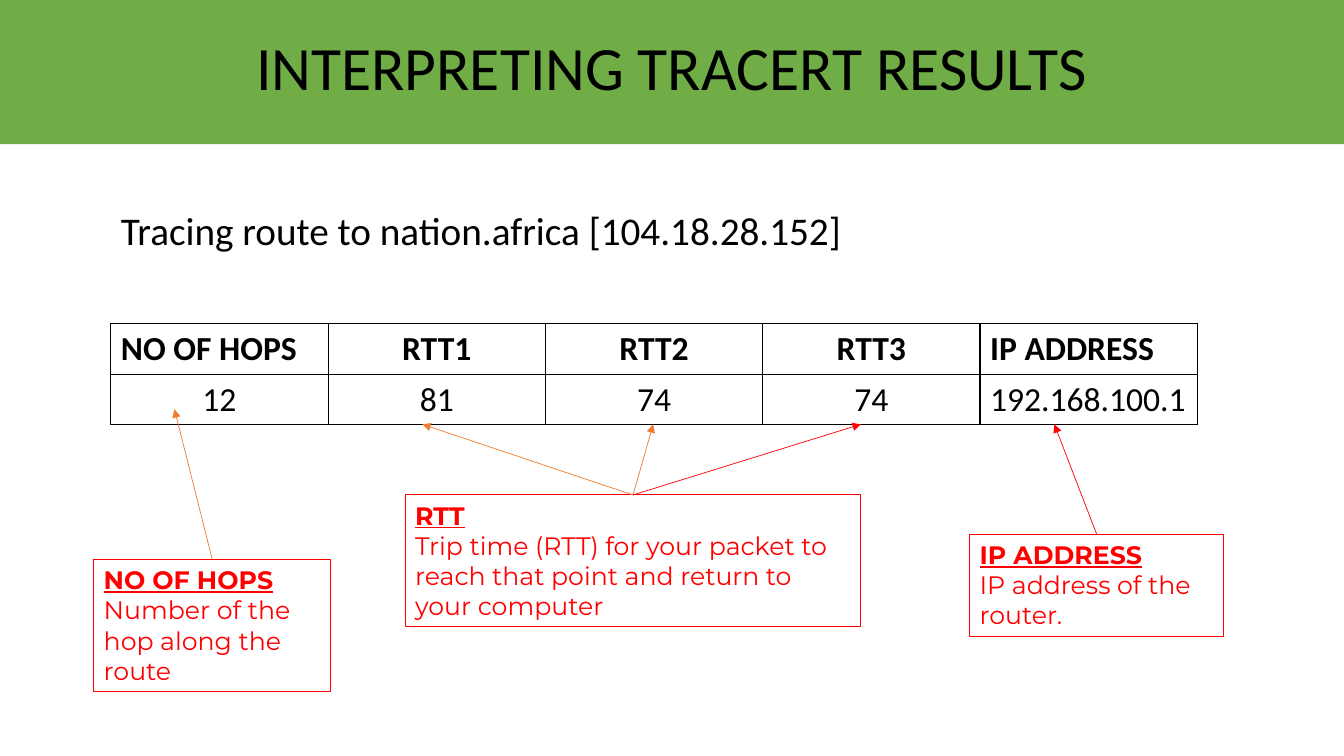
from lxml import etree
from pptx import Presentation
from pptx import util as u
from pptx.dml.color import RGBColor
from pptx.enum import shapes, text
from pptx.oxml import ns

BLACK = RGBColor(0x00, 0x00, 0x00)
WHITE = RGBColor(0xFF, 0xFF, 0xFF)
GREEN = RGBColor(0x70, 0xAD, 0x47)
RED = RGBColor(0xFF, 0x00, 0x00)
ORANGE = RGBColor(0xED, 0x7D, 0x31)

CENTER, LEFT = text.PP_ALIGN.CENTER, text.PP_ALIGN.LEFT


class SlideBuilder:
    """Draws on one slide; lengths are percentages of its width and height."""

    main_font, note_font = "Calibri", "Montserrat"

    def __init__(self, presentation):
        self.width, self.height = presentation.slide_width, presentation.slide_height
        self.slide = presentation.slides.add_slide(presentation.slide_layouts[5])

    def scale(self, *shares):
        """Turn alternating x and y shares into slide lengths."""
        sides = (self.width, self.height)
        return [u.Emu(round(share * sides[i % 2] / 100)) for i, share in enumerate(shares)]

    def style(self, paragraph, size, color=BLACK, name=main_font, bold=False, align=LEFT):
        paragraph.alignment = align
        font = paragraph.font
        font.size, font.name, font.bold = u.Pt(size), name, bold
        font.color.rgb = color

    def title(self, words, *place):
        shape = self.slide.shapes.title
        shape.left, shape.top, shape.width, shape.height = self.scale(*place)
        shape.fill.solid()
        shape.fill.fore_color.rgb = GREEN
        frame = shape.text_frame
        frame.text = words
        frame.vertical_anchor = text.MSO_ANCHOR.MIDDLE
        frame.paragraphs[0].line_spacing = 0.9
        self.style(frame.paragraphs[0], 44, align=CENTER)

    def text_box(self, lines, *place):
        shape = self.slide.shapes.add_textbox(*self.scale(*place))
        frame = shape.text_frame
        frame.word_wrap = True
        frame.auto_size = text.MSO_AUTO_SIZE.SHAPE_TO_FIT_TEXT
        frame.text = "\n".join(lines)
        return shape

    def caption(self, words, *place):
        shape = self.text_box([words], *place)
        self.style(shape.text_frame.paragraphs[0], 28)

    def note(self, heading, words, place, targets):
        """Outlined note with arrows from its top centre to the targets."""
        shape = self.text_box([heading, words], *place)
        shape.line.color.rgb = RED
        shape.line.width = u.Pt(0.75)
        for paragraph, is_heading in zip(shape.text_frame.paragraphs, (True, False)):
            self.style(paragraph, 18, RED, self.note_font, bold=is_heading)
            paragraph.font.underline = is_heading
        left, top, width, _ = place
        for x, y, color in targets:
            self.arrow((left + width / 2, top), (x, y), color)

    def arrow(self, start, end, color):
        connector = self.slide.shapes.add_connector(
            shapes.MSO_CONNECTOR.STRAIGHT, *self.scale(*start, *end))
        connector.line.color.rgb = color
        connector.line.width = u.Pt(0.5)
        line = connector.line._get_or_add_ln()
        etree.SubElement(line, ns.qn("a:tailEnd"), type="triangle")
        etree.SubElement(connector._element.spPr, ns.qn("a:effectLst"))

    def border(self, cell):
        properties = cell._tc.get_or_add_tcPr()
        for side in ("L", "R", "T", "B"):
            line = etree.SubElement(properties, ns.qn(f"a:ln{side}"), w=str(u.Pt(1)))
            fill = etree.SubElement(line, ns.qn("a:solidFill"))
            etree.SubElement(fill, ns.qn("a:srgbClr"), val=str(BLACK))

    def table(self, rows, alignments, *place):
        frame = self.slide.shapes.add_table(len(rows), len(rows[0]), *self.scale(*place))
        for r, values in enumerate(rows):
            for c, value in enumerate(values):
                cell = frame.table.cell(r, c)
                self.border(cell)
                cell.fill.solid()
                cell.fill.fore_color.rgb = WHITE
                cell.text = value
                self.style(cell.text_frame.paragraphs[0], 24,
                           bold=r == 0, align=alignments[r][c])


def main():
    presentation = Presentation()
    presentation.slide_width, presentation.slide_height = u.Inches(13.33), u.Inches(7.5)
    builder = SlideBuilder(presentation)

    # Heading band and traced host
    builder.title("INTERPRETING TRACERT RESULTS", 0, -0.27, 100, 19.33)
    builder.caption("Tracing route to nation.africa [104.18.28.152]", 8.25, 26.67, 63.9, 7.6)

    # One hop of the trace
    builder.table(
        [["NO OF HOPS", "RTT1", "RTT2", "RTT3", "IP ADDRESS"],
         ["12", "81", "74", "74", "192.168.100.1"]],
        [[LEFT, CENTER, CENTER, CENTER, LEFT],
         [CENTER, CENTER, CENTER, CENTER, LEFT]],
        8.25, 42.8, 80.85, 13.4)

    # Notes pointing at the table columns
    table_bottom = 56.13
    builder.note("NO OF HOPS", "Number of the hop along the route",
                 (6.98, 74, 17.63, 17.47), [(12.98, 54.13, ORANGE)])
    builder.note("RTT", "Trip time (RTT) for your packet to reach that point "
                 "and return to your computer", (30.15, 65.47, 33.9, 17.47),
                 [(31.43, table_bottom, ORANGE), (48.6, table_bottom, ORANGE),
                  (64.05, table_bottom, RED)])
    builder.note("IP ADDRESS", "IP address of the router.",
                 (72.15, 70.67, 18.9, 13.47), [(78.45, table_bottom, RED)])

    presentation.save("out.pptx")


if __name__ == "__main__":
    main()
